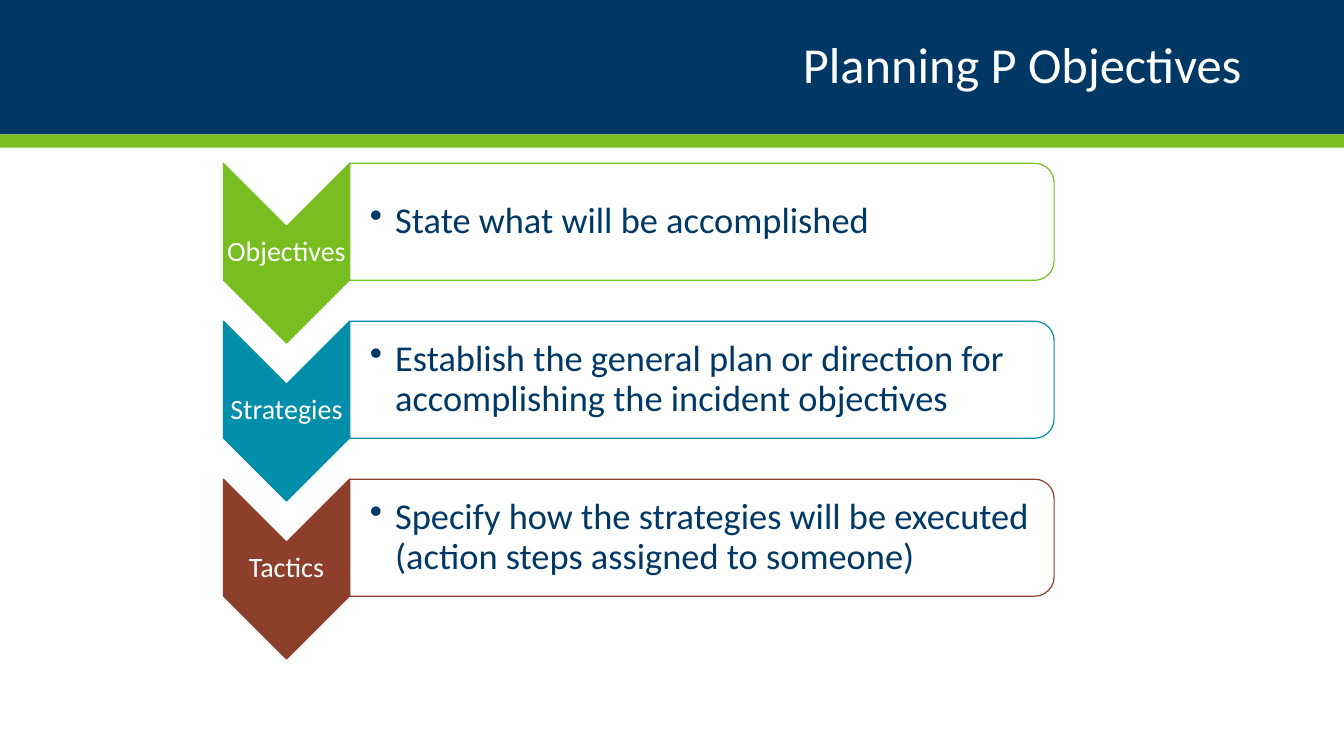
from lxml import etree
from pptx import Presentation
from pptx.dml.color import RGBColor
from pptx.enum.shapes import MSO_SHAPE
from pptx.enum.text import MSO_ANCHOR, PP_ALIGN
from pptx.oxml.ns import qn
from pptx.util import Cm, Pt

RECT = MSO_SHAPE.RECTANGLE
CHEVRON = MSO_SHAPE.CHEVRON
ROUND = MSO_SHAPE.ROUND_2_SAME_RECTANGLE
MIDDLE = MSO_ANCHOR.MIDDLE
LEFT, CENTER, RIGHT = PP_ALIGN.LEFT, PP_ALIGN.CENTER, PP_ALIGN.RIGHT

NAVY, GREEN, TEAL, RUST, WHITE = "003865", "78BE21", "008EAA", "8D3F2B", "FFFFFF"
STEPS = [
    ("Objectives", GREEN, "State what will be accomplished"),
    ("Strategies", TEAL, "Establish the general plan or direction for "
                         "accomplishing the incident objectives"),
    ("Tactics", RUST, "Specify how the strategies will be executed "
                      "(action steps assigned to someone)"),
]
PITCH = 3.98


def color(code):
    return RGBColor.from_string(code)


class Deck:
    font = "Calibri"

    def __init__(self, slide):
        self.slide = slide

    def shape(self, kind, x, y, w, h, fill, line=None):
        item = self.slide.shapes.add_shape(kind, Cm(x), Cm(y), Cm(w), Cm(h))
        item.shadow.inherit = False
        item.fill.solid()
        item.fill.fore_color.rgb = color(fill)
        if line:
            item.line.color.rgb = color(line)
            item.line.width = Pt(0.85)
        else:
            item.line.fill.background()
        return item

    def turned(self, kind, mid_x, mid_y, w, h, fill, line):
        """Place a shape by its centre and turn it a quarter clockwise."""
        item = self.shape(kind, mid_x - w / 2, mid_y - h / 2, w, h, fill, line)
        item.rotation = 90

    def text(self, words, x, y, w, h, size, ink, align, left, pad):
        box = self.slide.shapes.add_textbox(Cm(x), Cm(y), Cm(w), Cm(h))
        frame = box.text_frame
        frame.word_wrap = True
        frame.vertical_anchor = MIDDLE
        frame.margin_left = Cm(left)
        frame.margin_right = frame.margin_top = frame.margin_bottom = Cm(pad)
        para = frame.paragraphs[0]
        para.text = words
        para.alignment = align
        para.line_spacing = 0.9
        para.font.name = self.font
        para.font.size = Pt(size)
        para.font.color.rgb = color(ink)
        return para

    def bullet(self, para, indent):
        props = para._p.get_or_add_pPr()
        props.set("marL", str(Cm(indent)))
        props.set("indent", str(-Cm(indent)))
        mark = etree.Element(qn("a:buChar"), char="•")
        props.insert_element_before(mark, "a:tabLst", "a:defRPr", "a:extLst")


def main():
    show = Presentation()
    show.slide_width, show.slide_height = Cm(33.87), Cm(19.05)
    deck = Deck(show.slides.add_slide(show.slide_layouts[6]))

    # Header band and title
    deck.shape(RECT, 0, 0, 33.87, 3.39, NAVY)
    deck.shape(RECT, 0, 3.39, 33.87, 0.33, GREEN)
    deck.text("Planning P Objectives", 2.33, 0.43, 29.21, 2.54,
              36, WHITE, RIGHT, 0.25, 0.25)

    # One chevron and one text panel per step
    for row, (label, tint, words) in enumerate(STEPS):
        drop = row * PITCH
        deck.turned(CHEVRON, 7.22, 6.38 + drop, 4.53, 3.18, tint, tint)
        deck.text(label, 5.63, 5.69 + drop, 3.18, 1.35,
                  20, WHITE, CENTER, 0.03, 0.03)
        deck.turned(ROUND, 17.69, 5.59 + drop, 2.95, 17.75, WHITE, tint)
        para = deck.text(words, 8.81, 4.27 + drop, 17.6, 2.64,
                         26, NAVY, LEFT, 0.51, 0.05)
        deck.bullet(para, 0.64)

    show.save("out.pptx")


if __name__ == "__main__":
    main()
